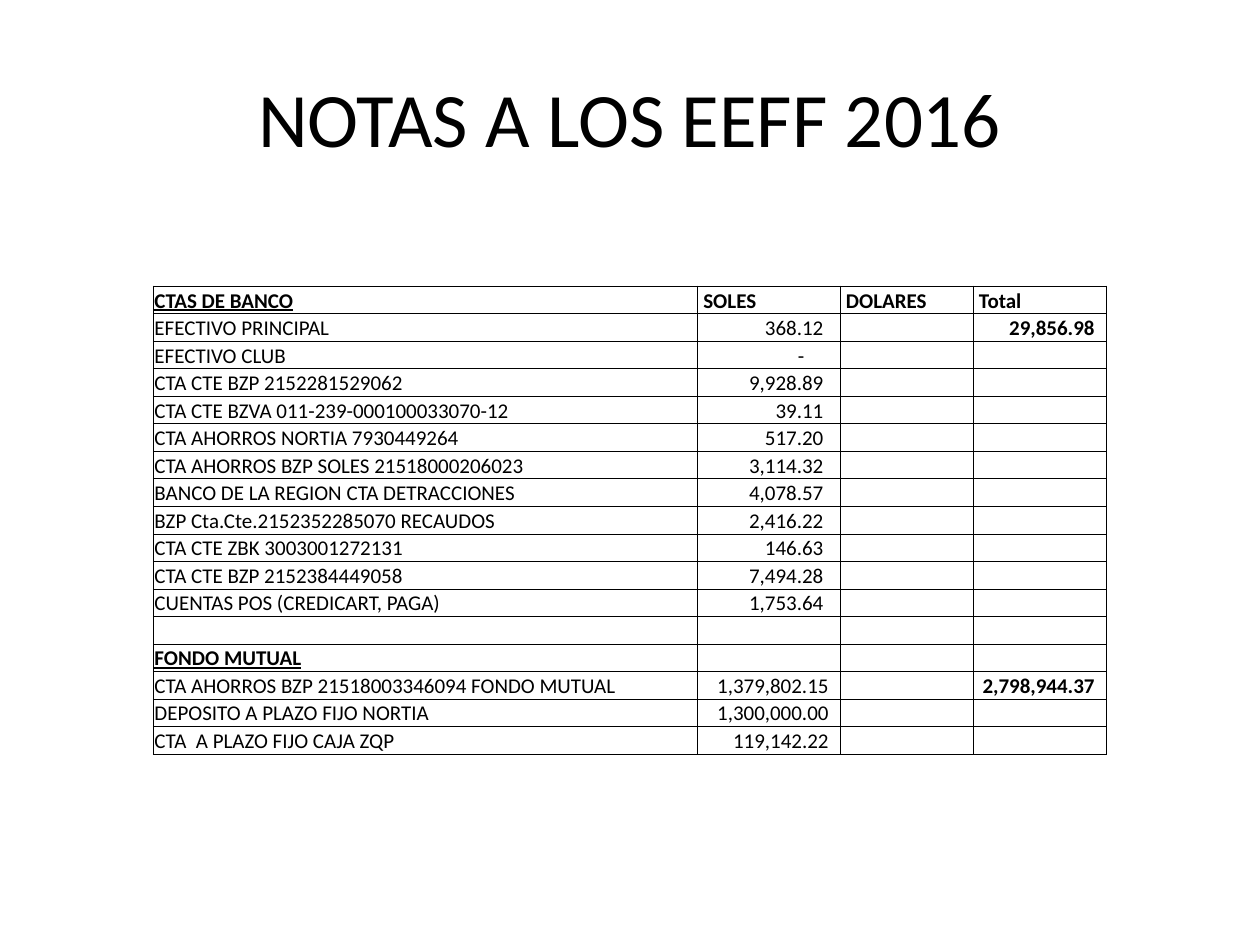
from lxml.etree import SubElement
from pptx import Presentation
from pptx.dml.color import RGBColor
from pptx.enum.text import MSO_ANCHOR, PP_ALIGN
from pptx.oxml.ns import qn
from pptx.util import Pt

COLORS = {"text": "000000", "border": "000000"}
FONT = "Calibri"
TEXT_SIZE = 12
LABEL_WIDTHS = [59, 111, 61, 80]
AMOUNT_WIDTHS = [81.5, 76, 76]
COLUMN_WIDTHS = LABEL_WIDTHS + AMOUNT_WIDTHS
LABEL_COUNT = len(LABEL_WIDTHS)
HEADERS = ["SOLES", "DOLARES", "Total"]
SECTIONS = ["CTAS DE BANCO", "FONDO MUTUAL"]

# Account, columns it spans, soles, dollars, total
ROWS = [
    ("CTAS DE BANCO", 2, *HEADERS),
    ("EFECTIVO PRINCIPAL", 2, "368.12", "", "29,856.98"),
    ("EFECTIVO CLUB", 2, "-", "", ""),
    ("CTA CTE BZP 2152281529062", 2, "9,928.89", "", ""),
    ("CTA CTE BZVA 011-239-000100033070-12", 3, "39.11", "", ""),
    ("CTA AHORROS NORTIA 7930449264", 3, "517.20", "", ""),
    ("CTA AHORROS BZP SOLES 21518000206023", 3, "3,114.32", "", ""),
    ("BANCO DE LA REGION CTA DETRACCIONES", 3, "4,078.57", "", ""),
    ("BZP Cta.Cte.2152352285070 RECAUDOS", 3, "2,416.22", "", ""),
    ("CTA CTE ZBK 3003001272131", 2, "146.63", "", ""),
    ("CTA CTE BZP 2152384449058", 2, "7,494.28", "", ""),
    ("CUENTAS POS (CREDICART, PAGA)", 2, "1,753.64", "", ""),
    ("", 1, "", "", ""),
    ("FONDO MUTUAL", 2, "", "", ""),
    ("CTA AHORROS BZP 21518003346094 FONDO MUTUAL", 4, "1,379,802.15", "", "2,798,944.37"),
    ("DEPOSITO A PLAZO FIJO NORTIA", 2, "1,300,000.00", "", ""),
    ("CTA  A PLAZO FIJO CAJA ZQP", 2, "119,142.22", "", ""),
]


def format_font(font, size, bold=False, underline=False):
    font.name = FONT
    font.size = Pt(size)
    font.bold = bold
    font.underline = underline
    font.color.rgb = RGBColor.from_string(COLORS["text"])


def add_borders(cell, sides):
    """Draw the borders named in sides (L, R, T, B) and clear the others."""
    properties = cell._tc.get_or_add_tcPr()
    for side in "LRTB":
        line = SubElement(properties, qn(f"a:ln{side}"), w=str(Pt(0.5)))
        if side in sides:
            fill = SubElement(line, qn("a:solidFill"))
            SubElement(fill, qn("a:srgbClr"), val=COLORS["border"])
        else:
            SubElement(line, qn("a:noFill"))


def amount_margin(text):
    """Right margin of an amount: long amounts sit nearer the edge."""
    if text == "-":
        return 20.5
    return 6.5 if len(text) >= 9 else 9.5


def fill_cell(cell, text, sides="LRTB", bold=False, underline=False,
              left=0.7, right=0.7, alignment=PP_ALIGN.LEFT):
    add_borders(cell, sides)
    cell.fill.background()
    cell.vertical_anchor = MSO_ANCHOR.BOTTOM
    cell.margin_left, cell.margin_right = Pt(left), Pt(right)
    cell.margin_top, cell.margin_bottom = Pt(0.7), Pt(0)
    paragraph = cell.text_frame.paragraphs[0]
    paragraph.alignment = alignment
    format_font(paragraph.font, TEXT_SIZE, bold, underline)
    if text:
        paragraph.text = text
    else:
        # Keeps an empty row as low as the others
        SubElement(paragraph._p, qn("a:endParaRPr"), sz=str(TEXT_SIZE * 100))


def fill_label(table, row_index, label, span):
    """Write the account over its span; the label columns form one frame."""
    is_section = label in SECTIONS
    for index in range(LABEL_COUNT):
        sides = "TB"
        if index == 0:
            sides += "L"
        if index == LABEL_COUNT - 1 or span == LABEL_COUNT:
            sides += "R"
        fill_cell(table.cell(row_index, index), "" if index else label, sides,
                  is_section, is_section)
    if span > 1:
        table.cell(row_index, 0).merge(table.cell(row_index, span - 1))


def fill_amounts(table, row_index, amounts):
    for index, amount in enumerate(amounts):
        cell = table.cell(row_index, LABEL_COUNT + index)
        if row_index == 0:
            fill_cell(cell, amount, bold=True, left=3.4)
        else:
            fill_cell(cell, amount, bold=index == len(amounts) - 1,
                      right=amount_margin(amount), alignment=PP_ALIGN.RIGHT)


def place_title(slide, left, top, width, height):
    title = slide.shapes.title
    title.left, title.top = Pt(left), Pt(top)
    title.width, title.height = Pt(width), Pt(height)
    title.text_frame.text = "NOTAS A LOS EEFF 2016"
    title.text_frame.vertical_anchor = MSO_ANCHOR.MIDDLE
    paragraph = title.text_frame.paragraphs[0]
    paragraph.alignment = PP_ALIGN.CENTER
    format_font(paragraph.font, 44)


def add_accounts_table(slide, left, top, width, height):
    table = slide.shapes.add_table(len(ROWS), len(COLUMN_WIDTHS), Pt(left), Pt(top),
                                   Pt(width), Pt(height)).table
    table.first_row = table.horz_banding = False
    for column, column_width in zip(table.columns, COLUMN_WIDTHS):
        column.width = Pt(column_width)
    for row in table.rows:
        row.height = Pt(height / len(ROWS))
    for row_index, (label, span, *amounts) in enumerate(ROWS):
        fill_label(table, row_index, label, span)
        fill_amounts(table, row_index, amounts)


def main():
    presentation = Presentation()
    presentation.slide_width, presentation.slide_height = Pt(720), Pt(540)
    slide = presentation.slides.add_slide(presentation.slide_layouts[5])
    place_title(slide, 36, 21.6, 648, 90)
    add_accounts_table(slide, 87.6, 163.5, sum(COLUMN_WIDTHS), 267.6)
    presentation.save("out.pptx")


if __name__ == "__main__":
    main()
